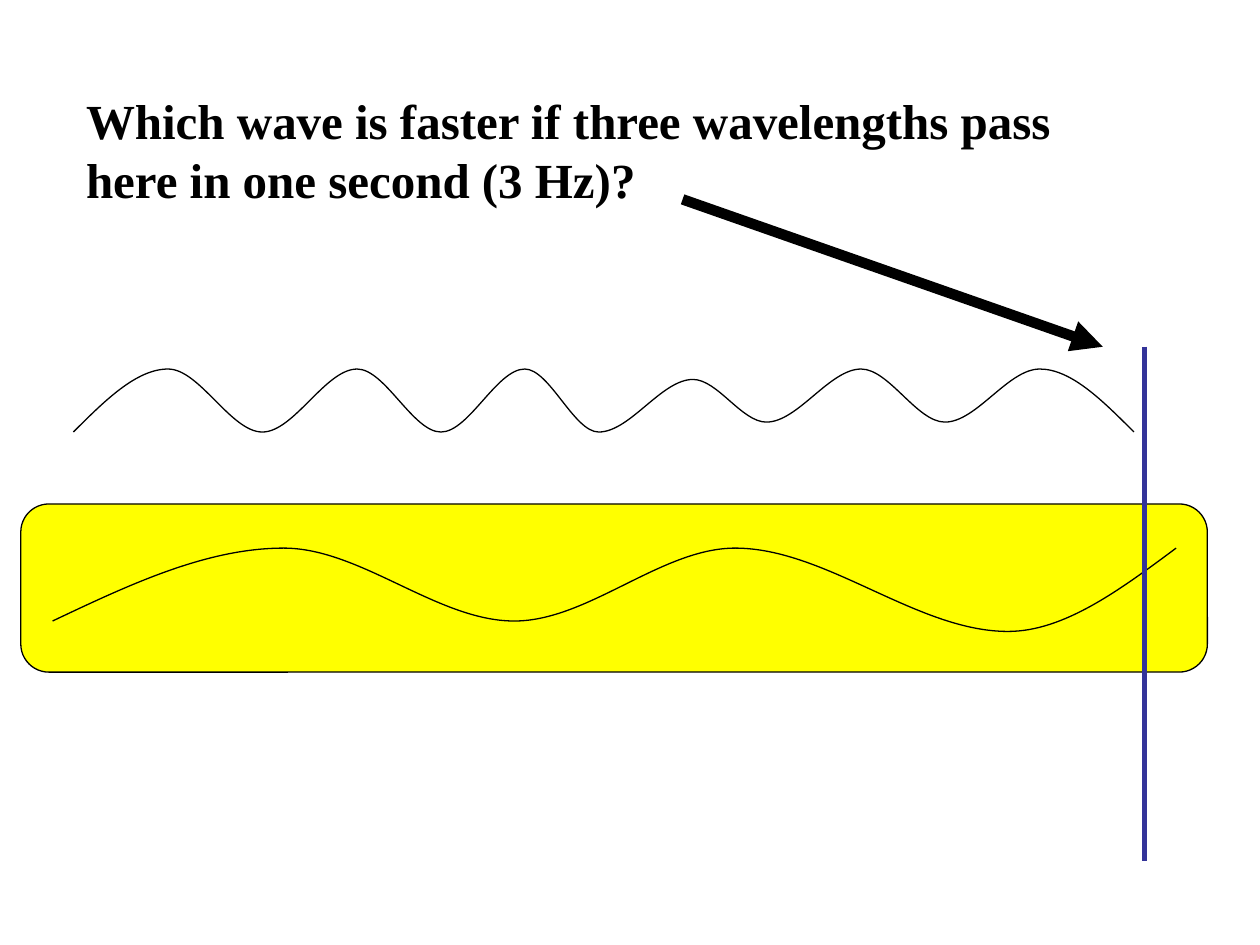
"""Build a slide that compares two waves passing a line."""
from pptx import Presentation, util as u
from pptx.dml.color import RGBColor
from pptx.enum import shapes, text
from pptx.oxml import ns, xmlchemy as xc

TITLE = "Which wave is faster if three wavelengths pass here in one second (3 Hz)?"
FONT = "Times New Roman"
BLACK, YELLOW, BLUE = "000000", "FFFF00", "333399"
WAVES = [
    [(1.48, 8.71), (3.39, 7.44), (5.29, 8.71), (7.2, 7.44), (8.89, 8.71),
     (10.58, 7.44), (12.07, 8.71), (13.97, 7.65), (15.45, 8.51),
     (17.36, 7.44), (19.05, 8.51), (20.96, 7.44), (22.86, 8.71)],
    [(1.06, 12.52), (5.72, 11.05), (10.37, 12.52), (14.82, 11.05),
     (20.32, 12.73), (23.71, 11.05)],
]
BAND = (0.42, 10.16, 23.92, 3.39)
HEAD = (1.48, 1.7, 21.17, 2.62)
ARROW = (13.76, 4.02, 22.23, 6.99)
MARK = (23.07, 6.99, 23.07, 17.36)


def cms(nums):
    return [u.Cm(n) for n in nums]


def tint(color, value):
    color.rgb = RGBColor.from_string(value)


def edge(item, value, width):
    tint(item.line.color, value)
    item.line.width = u.Pt(width)


def add_title(slide):
    title = slide.shapes.title
    title.left, title.top, title.width, title.height = cms(HEAD)
    frame = title.text_frame
    frame.text = TITLE
    frame.word_wrap = True
    frame.auto_size = text.MSO_AUTO_SIZE.SHAPE_TO_FIT_TEXT
    frame.vertical_anchor = text.MSO_ANCHOR.TOP
    para = frame.paragraphs[0]
    para.alignment = text.PP_ALIGN.LEFT
    para.font.name, para.font.size, para.font.bold = FONT, u.Pt(28), True
    tint(para.font.color, BLACK)


def add_band(slide):
    band = slide.shapes.add_shape(shapes.MSO_SHAPE.ROUNDED_RECTANGLE, *cms(BAND))
    band.shadow.inherit = False
    band.fill.solid()
    tint(band.fill.fore_color, YELLOW)
    edge(band, BLACK, 0.75)


def add_wave(slide, knots):
    """Join the knots by curves that are level at each inner knot."""
    points, last = [], len(knots) - 2
    for i, ((ax, ay), (bx, by)) in enumerate(zip(knots, knots[1:])):
        third, mid = (bx - ax) / 3, (ay + by) / 2
        points += [(ax + third, mid if i == 0 else ay),
                   (bx - third, mid if i == last else by), (bx, by)]
    form = slide.shapes.build_freeform(*cms(knots[0]))
    form.add_line_segments([cms(p) for p in points], close=False)
    wave = form.convert_to_shape()
    wave.shadow.inherit = False
    wave.fill.background()
    edge(wave, BLACK, 0.75)
    lines = list(wave._element.iter(ns.qn("a:lnTo")))
    for i in range(0, len(lines), 3):
        curve = xc.OxmlElement("a:cubicBezTo")
        lines[i].addprevious(curve)
        for line in lines[i:i + 3]:
            curve.append(line[0])
            line.getparent().remove(line)


def add_line(slide, ends, color, width, head=False):
    line = slide.shapes.add_connector(shapes.MSO_CONNECTOR.STRAIGHT, *cms(ends))
    edge(line, color, width)
    if head:
        tip = xc.OxmlElement("a:tailEnd")
        tip.set("type", "triangle")
        line.line._get_or_add_ln().append(tip)
    line._element.spPr.append(xc.OxmlElement("a:effectLst"))


def main():
    deck = Presentation()
    deck.slide_width, deck.slide_height = cms((25.4, 19.05))
    slide = deck.slides.add_slide(deck.slide_layouts[5])
    add_title(slide)
    add_band(slide)
    for knots in WAVES:
        add_wave(slide, knots)
    add_line(slide, ARROW, BLACK, 6, head=True)
    add_line(slide, MARK, BLUE, 3)
    deck.save("out.pptx")


if __name__ == "__main__":
    main()
